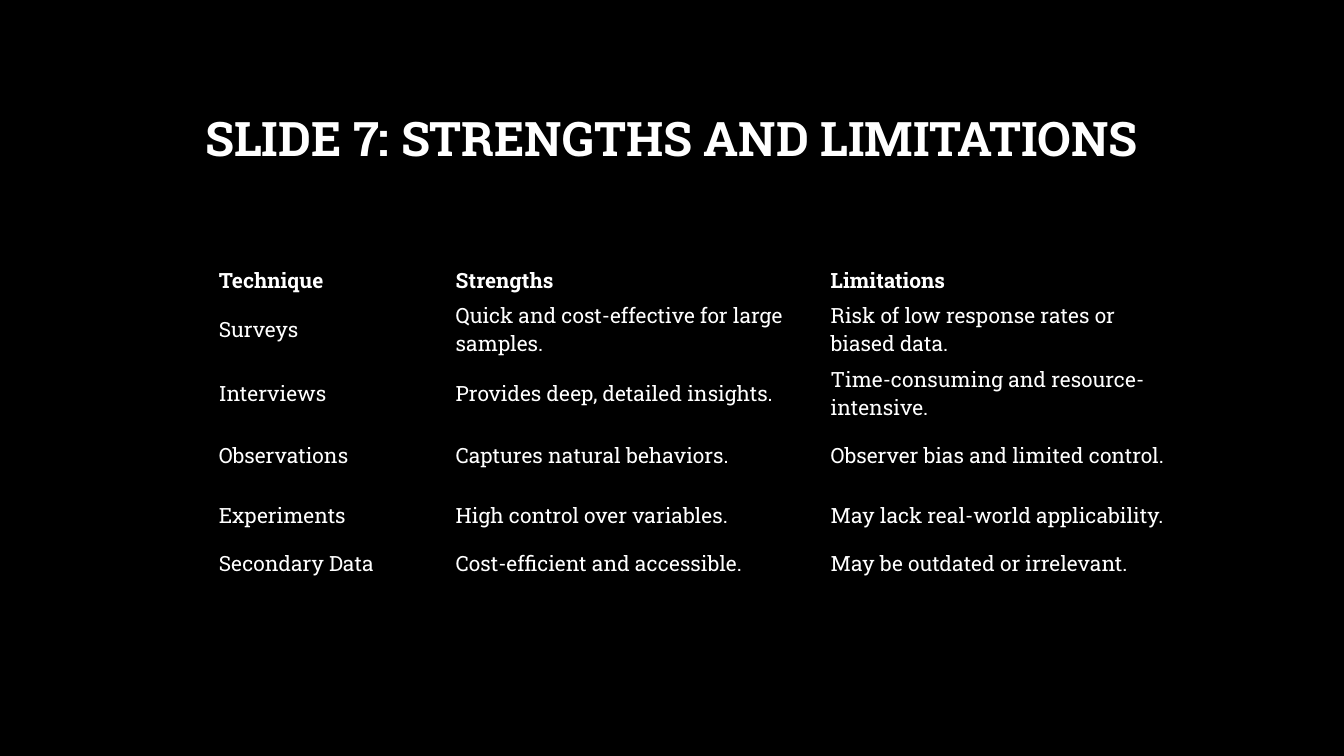
from pptx import Presentation, util as u
from pptx.dml.color import RGBColor
from pptx.enum import text
from pptx.oxml import ns


def paint(fill, color):
    fill.solid()
    fill.fore_color.rgb = RGBColor.from_string(color)


def style(p, size, bold):
    for r in p.runs:
        r.font.name = "Roboto Slab"
        r.font.size = u.Pt(size)
        r.font.bold = bold
        paint(r.font.fill, "FFFFFF")


rows = [
    ("Technique", "Strengths", "Limitations"),
    ("Surveys", "Quick and cost-effective for large samples.",
     "Risk of low response rates or biased data."),
    ("Interviews", "Provides deep, detailed insights.",
     "Time-consuming and resource-intensive."),
    ("Observations", "Captures natural behaviors.",
     "Observer bias and limited control."),
    ("Experiments", "High control over variables.",
     "May lack real-world applicability."),
    ("Secondary Data", "Cost-efficient and accessible.",
     "May be outdated or irrelevant."),
]
widths = [2.35, 3.72, 3.63]
heights = [0.34] + [0.6] * 4 + [0.34]

prs = Presentation()
prs.slide_width, prs.slide_height = u.Inches(13.33), u.Inches(7.5)
s = prs.slides.add_slide(prs.slide_layouts[5])
paint(s.background.fill, "000000")

title = s.shapes.title
title.left, title.top = u.Inches(1), u.Inches(0.67)
title.width, title.height = u.Inches(11.32), u.Inches(1.45)
tf = title.text_frame
tf.text = "SLIDE 7: STRENGTHS AND LIMITATIONS"
tf.word_wrap = True
tf.vertical_anchor = text.MSO_ANCHOR.MIDDLE
p = tf.paragraphs[0]
p.alignment = text.PP_ALIGN.CENTER
p.line_spacing = 0.9
style(p, 34, True)

frame = s.shapes.add_table(
    len(rows), len(widths), u.Inches(2.08), u.Inches(2.6),
    u.Inches(sum(widths)), u.Inches(sum(heights)))
table = frame.table
table.first_row = True
table.horz_banding = False
style_id = frame._element.find(".//" + ns.qn("a:tableStyleId"))
style_id.text = "{2D5ABB26-0587-4C30-8999-92F81FD0307C}"

for column, width in zip(table.columns, widths):
    column.width = u.Inches(width)
for i, (row, height) in enumerate(zip(table.rows, heights)):
    row.height = u.Inches(height)
    for cell, words in zip(row.cells, rows[i]):
        cell.text_frame.text = words
        cell.vertical_anchor = text.MSO_ANCHOR.MIDDLE
        cell.margin_left = cell.margin_right = u.Inches(0.09)
        cell.margin_top = cell.margin_bottom = u.Inches(0.04)
        cell.fill.background()
        style(cell.text_frame.paragraphs[0], 15, i == 0)

prs.save("out.pptx")
